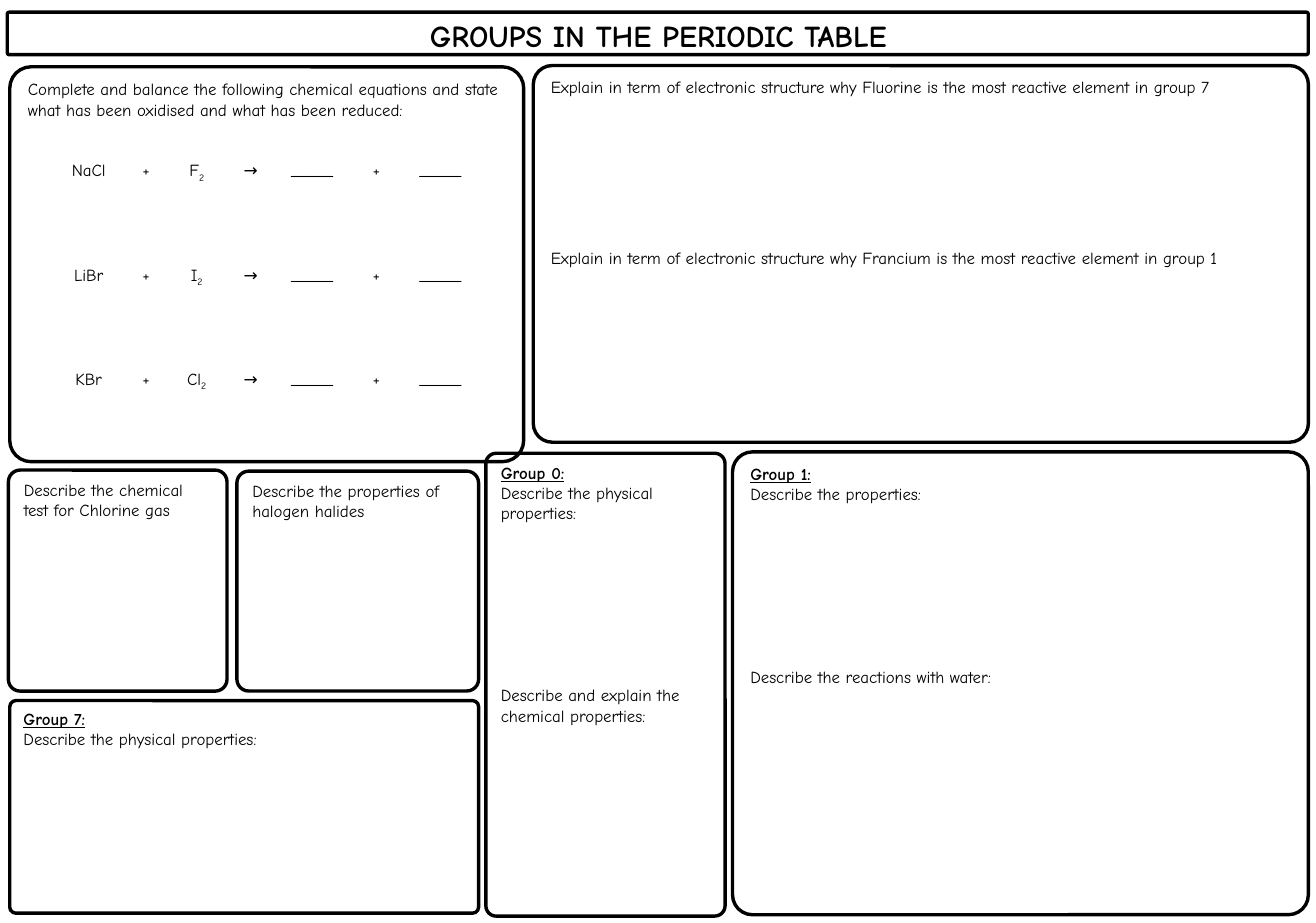
from lxml.etree import SubElement
from pptx import Presentation
from pptx.dml.color import RGBColor
from pptx.enum.shapes import MSO_SHAPE as Shape
from pptx.enum.text import MSO_ANCHOR as Anchor, MSO_AUTO_SIZE as AutoSize, PP_ALIGN as Align
from pptx.oxml.ns import qn
from pptx.util import Pt

COLORS = {"ink": "000000", "paper": "FFFFFF"}
FONT = "Comic Neue"
SLIDE_SIZE = (780, 547)

TITLE = "GROUPS IN THE PERIODIC TABLE"
TITLE_BOX = (5, 6.5, 770.4, 28.8)
TITLE_BAR = (4.3, 7.2, 771.1, 25.2)

EQUATIONS = [("NaCl", "F"), ("LiBr", "I"), ("KBr", "Cl")]
COLUMN_CENTERS = [36, 70, 100, 132, 168.5, 206.5, 244.5]
EQUATION_GAPS = [24, 48, 48]
BLANK = "_____"

PANELS = [
    {"box": (5.8, 39.6, 304.6, 234), "corner": 0.054, "equations": EQUATIONS,
     "prompts": [("Complete and balance the following chemical equations and state "
                  "what has been oxidised and what has been reduced:", 0)]},
    {"box": (434.2, 267.8, 341.3, 274.3), "corner": 0.043, "heading": "Group 1:",
     "prompts": [("Describe the properties:", 0), ("Describe the reactions with water:", 96)]},
    {"box": (288, 268.6, 141.8, 274.3), "corner": 0.043, "heading": "Group 0:",
     "prompts": [("Describe the physical properties:", 0),
                 ("Describe and explain the chemical properties:", 96)]},
    {"box": (316.1, 38.9, 459.4, 223.2), "corner": 0.05,
     "prompts": [("Explain in term of electronic structure why Fluorine is the most "
                  "reactive element in group 7", 0),
                 ("Explain in term of electronic structure why Francium is the most "
                  "reactive element in group 1", 89)]},
    {"box": (5.8, 415.2, 277.9, 126), "corner": 0.029, "heading": "Group 7:",
     "prompts": [("Describe the physical properties:", 0)]},
    {"box": (5, 278.6, 129.6, 131), "corner": 0.054,
     "prompts": [("Describe the chemical test for Chlorine gas", 0)]},
    {"box": (140.4, 279.2, 143.3, 130.3), "corner": 0.054,
     "prompts": [("Describe the properties of halogen halides", 0)]},
]


def color(name):
    return RGBColor.from_string(COLORS[name])


def add_text(paragraph, text, size=10, bold=False, underline=False, baseline=0):
    run = paragraph.add_run()
    run.text = text
    font = run.font
    font.name, font.size = FONT, Pt(size)
    font.bold, font.underline = bold, underline
    font.color.rgb = color("ink")
    if baseline:
        run._r.get_or_add_rPr().set("baseline", str(baseline * 1000))


def add_outline(slide, box, corner):
    shape = slide.shapes.add_shape(Shape.ROUNDED_RECTANGLE, *map(Pt, box))
    shape.adjustments[0] = corner
    shape.shadow.inherit = False
    shape.fill.background()
    shape.line.color.rgb = color("ink")
    shape.line.width = Pt(2)
    return shape


def next_paragraph(frame, gap=0):
    paragraph = frame.paragraphs[0]
    if paragraph.runs:
        paragraph = frame.add_paragraph()
    paragraph.alignment = Align.LEFT
    paragraph.space_before = Pt(gap)
    return paragraph


def add_equation(frame, salt, halogen, gap):
    paragraph = next_paragraph(frame, gap)
    tabs = SubElement(paragraph._p.get_or_add_pPr(), qn("a:tabLst"))
    for center in COLUMN_CENTERS:
        SubElement(tabs, qn("a:tab"), pos=str(Pt(center)), algn="ctr")
    add_text(paragraph, "\t" + "\t".join([salt, "+", halogen]))
    add_text(paragraph, "2", baseline=-25)
    add_text(paragraph, "\t" + "\t".join(["→", BLANK, "+", BLANK]))


def add_panel(slide, box, corner, prompts, heading=None, equations=()):
    frame = add_outline(slide, box, corner).text_frame
    frame.word_wrap = True
    frame.vertical_anchor = Anchor.TOP
    if heading:
        add_text(next_paragraph(frame), heading, bold=True, underline=True)
    for prompt, gap in prompts:
        add_text(next_paragraph(frame, gap), prompt)
    for (salt, halogen), gap in zip(equations, EQUATION_GAPS):
        add_equation(frame, salt, halogen, gap)


def add_title(slide):
    title = slide.shapes.title
    title.left, title.top, title.width, title.height = map(Pt, TITLE_BOX)
    frame = title.text_frame
    frame.word_wrap = True
    frame.auto_size = AutoSize.NONE
    frame.vertical_anchor = Anchor.TOP
    paragraph = frame.paragraphs[0]
    paragraph.alignment = Align.CENTER
    add_text(paragraph, TITLE, size=18, bold=True)


def main():
    presentation = Presentation()
    presentation.slide_width, presentation.slide_height = map(Pt, SLIDE_SIZE)
    slide = presentation.slides.add_slide(presentation.slide_layouts[5])
    slide.background.fill.solid()
    slide.background.fill.fore_color.rgb = color("paper")
    add_title(slide)
    add_outline(slide, TITLE_BAR, 0.045)
    for panel in PANELS:
        add_panel(slide, **panel)
    presentation.save("out.pptx")


if __name__ == "__main__":
    main()
